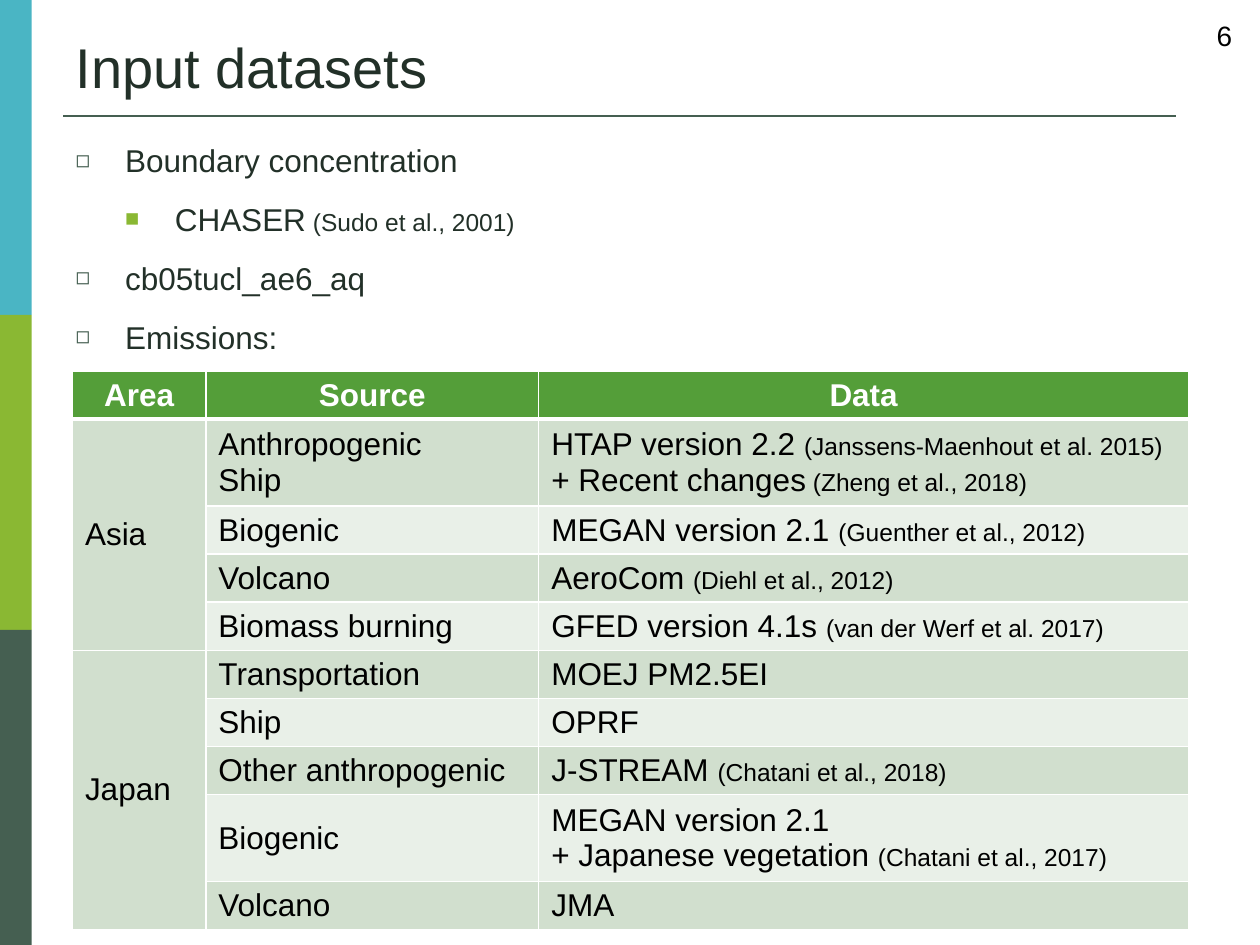
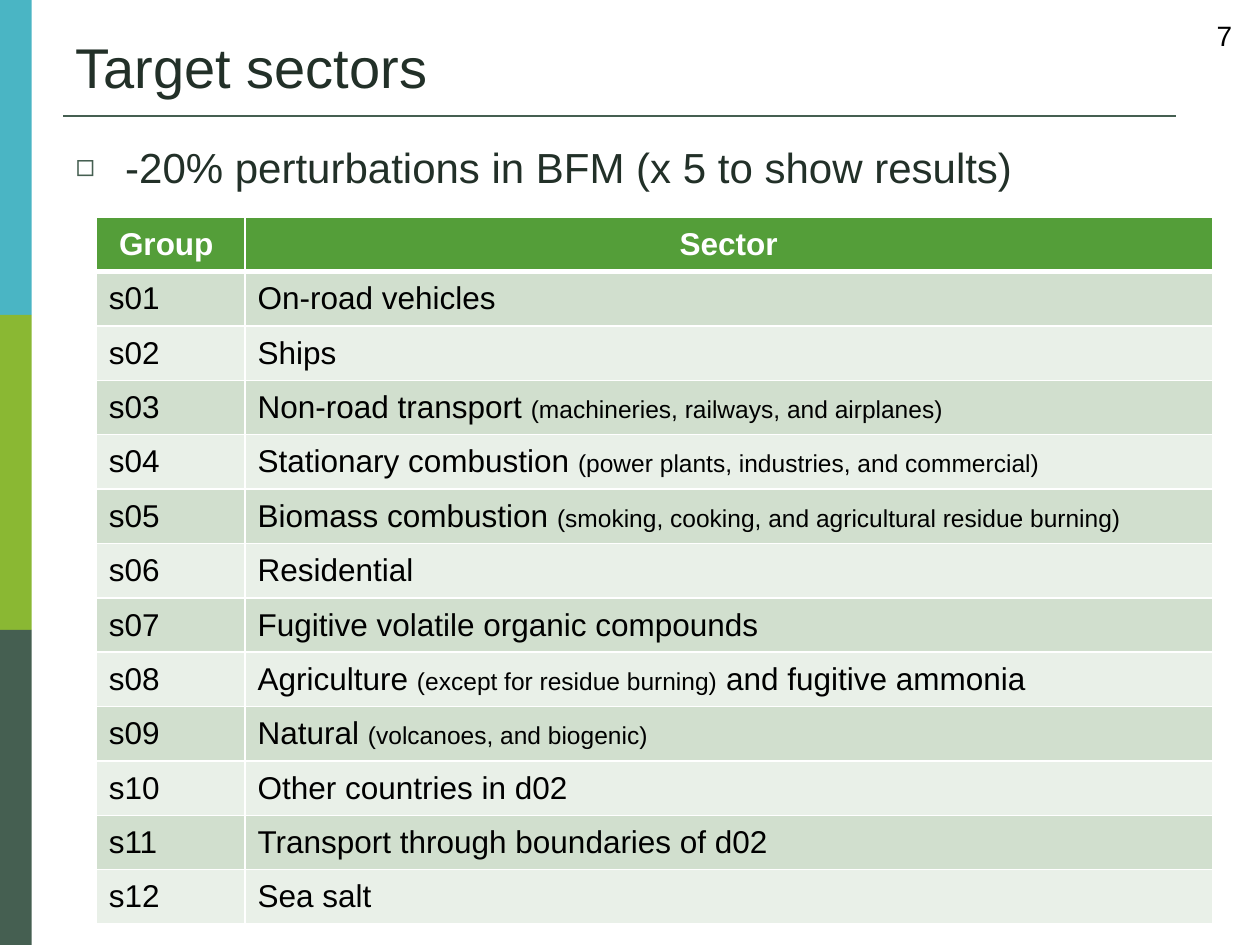
from lxml.etree import SubElement
from pptx import Presentation
from pptx.dml.color import RGBColor
from pptx.enum.shapes import MSO_CONNECTOR as Conn, MSO_SHAPE as Shape
from pptx.enum.text import MSO_ANCHOR as Anchor, MSO_AUTO_SIZE as Fit, PP_ALIGN as Align
from pptx.oxml.ns import qn
from pptx.util import Cm, Pt

TEAL = RGBColor(0x4A, 0xB5, 0xC4)
LIME = RGBColor(0x8A, 0xB8, 0x33)
PINE = RGBColor(0x45, 0x5F, 0x51)
INK = RGBColor(0x22, 0x30, 0x28)
GREEN = RGBColor(0x54, 0x9E, 0x39)
SAGE = RGBColor(0xD1, 0xDF, 0xCE)
MIST = RGBColor(0xE9, 0xF0, 0xE8)
WHITE = RGBColor(0xFF, 0xFF, 0xFF)
BLACK = RGBColor(0x00, 0x00, 0x00)

FONT = "Arial"
SMALL = 14
BAND_H = 6.35
BULLETS = [("◻", PINE), ("■", LIME)]


class Deck:
    def __init__(self):
        self.prs = Presentation()
        self.prs.slide_width, self.prs.slide_height = Cm(25.4), Cm(19.05)
        self.slide = None

    def place(self, shape, left, top, width, height):
        shape.left, shape.top = Cm(left), Cm(top)
        shape.width, shape.height = Cm(width), Cm(height)

    def words(self, para, text, size, color, bold=False):
        """Fill a paragraph; text between bars is set small."""
        for i, part in enumerate(text.split("|")):
            if not part:
                continue
            run = para.add_run()
            run.text = part
            font = run.font
            font.name, font.bold = FONT, bold
            font.size = Pt(SMALL if i % 2 else size)
            font.color.rgb = color

    # Page frame: bands, rule, title and number
    def page(self, title, number):
        self.slide = self.prs.slides.add_slide(self.prs.slide_layouts[1])
        for i, color in enumerate([TEAL, LIME, PINE]):
            self.band(i * BAND_H, color)
        self.rule()
        head = self.slide.shapes.title
        self.place(head, 1.27, 0.33, 22.86, 1.8)
        frame = head.text_frame
        frame.auto_size, frame.vertical_anchor = Fit.NONE, Anchor.BOTTOM
        para = frame.paragraphs[0]
        para.alignment = Align.LEFT
        self.words(para, title, 32, INK)
        self.number(number)

    def band(self, top, color):
        box = self.slide.shapes.add_shape(
            Shape.RECTANGLE, 0, Cm(top), Cm(0.64), Cm(BAND_H))
        box.shadow.inherit = False
        box.fill.solid()
        box.fill.fore_color.rgb = color
        box.line.fill.background()

    def rule(self):
        line = self.slide.shapes.add_connector(
            Conn.STRAIGHT, Cm(1.27), Cm(2.34), Cm(23.7), Cm(2.34))
        line.line.color.rgb = PINE
        line.line.width = Pt(1.5)
        SubElement(line._element.spPr, qn("a:effectLst"))

    def number(self, number):
        box = self.slide.shapes.add_textbox(Cm(23.29), Cm(0.25), Cm(1.8), Cm(1.27))
        box.text_frame.word_wrap = True
        para = box.text_frame.paragraphs[0]
        para.alignment = Align.RIGHT
        self.words(para, str(number), 16, BLACK)

    # Bulleted list of (level, text)
    def bullets(self, items, size):
        body = self.slide.placeholders[1]
        self.place(body, 1.27, 2.72, 22.86, 15.9)
        frame = body.text_frame
        frame.auto_size = Fit.NONE
        for i, (level, text) in enumerate(items):
            para = frame.add_paragraph() if i else frame.paragraphs[0]
            para.level = level
            para.space_before = Pt(12)
            self.mark(para, level)
            self.words(para, text, size, INK)

    def mark(self, para, level):
        sign, color = BULLETS[level]
        props = para._p.get_or_add_pPr()
        props.set("marL", str(Cm(1 + level)))
        props.set("indent", str(-Cm(1)))
        tint = SubElement(props, qn("a:buClr"))
        SubElement(tint, qn("a:srgbClr"), val=str(color))
        SubElement(props, qn("a:buSzPct"), val="75000")
        SubElement(props, qn("a:buFont"), typeface=FONT)
        SubElement(props, qn("a:buChar"), char=sign)

    # Banded table with a header row
    def table(self, left, top, widths, heights, rows, pad):
        grid = self.slide.shapes.add_table(
            len(rows), len(widths), Cm(left), Cm(top),
            Cm(sum(widths)), Cm(sum(heights))).table
        for col, width in zip(grid.columns, widths):
            col.width = Cm(width)
        for r, (row, height) in enumerate(zip(rows, heights)):
            grid.rows[r].height = Cm(height)
            for c, text in enumerate(row):
                self.cell(grid.cell(r, c), r, text, pad)
        return grid

    def cell(self, cell, row, text, pad):
        head = row == 0
        cell.vertical_anchor = Anchor.MIDDLE
        cell.margin_top = cell.margin_bottom = Cm(pad)
        cell.fill.solid()
        cell.fill.fore_color.rgb = GREEN if head else SAGE if row % 2 else MIST
        self.edges(cell, 3 if row == 1 else 1, 3 if head else 1)
        for i, line in enumerate(text.split("\n")):
            frame = cell.text_frame
            para = frame.add_paragraph() if i else frame.paragraphs[0]
            para.alignment = Align.CENTER if head else Align.LEFT
            self.words(para, line, 18, WHITE if head else BLACK, head)

    def edges(self, cell, top, bottom):
        props = cell._tc.get_or_add_tcPr()
        sides = [("L", 1), ("R", 1), ("T", top), ("B", bottom)]
        for i, (side, width) in enumerate(sides):
            line = SubElement(props, qn("a:ln" + side), w=str(Pt(width)))
            fill = SubElement(line, qn("a:solidFill"))
            SubElement(fill, qn("a:srgbClr"), val=str(WHITE))
            props.insert(i, line)


def inputs(deck):
    deck.page("Input datasets", 6)
    deck.bullets([
        (0, "Boundary concentration"),
        (1, "CHASER| (Sudo et al., 2001)|"),
        (0, "cb05tucl_ae6_aq"),
        (0, "Emissions:"),
    ], 18)
    rows = [
        ("Area", "Source", "Data"),
        ("Asia", "Anthropogenic\nShip",
         "HTAP version 2.2 |(Janssens-Maenhout et al. 2015)|\n"
         "+ Recent changes| (Zheng et al., 2018)|"),
        ("", "Biogenic", "MEGAN version 2.1 |(Guenther et al., 2012)|"),
        ("", "Volcano", "AeroCom |(Diehl et al., 2012)|"),
        ("", "Biomass burning", "GFED version 4.1s |(van der Werf et al. 2017)|"),
        ("Japan", "Transportation", "MOEJ PM2.5EI"),
        ("", "Ship", "OPRF"),
        ("", "Other anthropogenic", "J-STREAM |(Chatani et al., 2018)|"),
        ("", "Biogenic",
         "MEGAN version 2.1\n+ Japanese vegetation |(Chatani et al., 2017)|"),
        ("", "Volcano", "JMA"),
    ]
    heights = [1.75 if "\n" in row[2] else 0.97 for row in rows]
    grid = deck.table(1.46, 7.48, [2.69, 6.71, 13.1], heights, rows, 0.1)
    # Each area spans its sources
    for first, last in [(1, 4), (5, 9)]:
        grid.cell(first, 0).merge(grid.cell(last, 0))


def sectors(deck):
    deck.page("Target sectors", 7)
    deck.bullets([(0, "-20% perturbations in BFM (x 5 to show results)")], 24)
    names = [
        "On-road vehicles",
        "Ships",
        "Non-road transport |(machineries, railways, and airplanes)|",
        "Stationary combustion |(power plants, industries, and commercial)|",
        "Biomass combustion |(smoking, cooking, and agricultural residue burning)|",
        "Residential",
        "Fugitive volatile organic compounds",
        "Agriculture |(except for residue burning)| and fugitive ammonia",
        "Natural |(volcanoes, and biogenic)|",
        "Other countries in d02",
        "Transport through boundaries of d02",
        "Sea salt",
    ]
    rows = [("Group ", "Sector")]
    rows += [(f"s{i:02}", name) for i, name in enumerate(names, 1)]
    heights = [14.25 / len(rows)] * len(rows)
    deck.table(1.94, 4.38, [3, 19.5], heights, rows, 0.13)


def main():
    deck = Deck()
    inputs(deck)
    sectors(deck)
    deck.prs.save("out.pptx")


if __name__ == "__main__":
    main()
